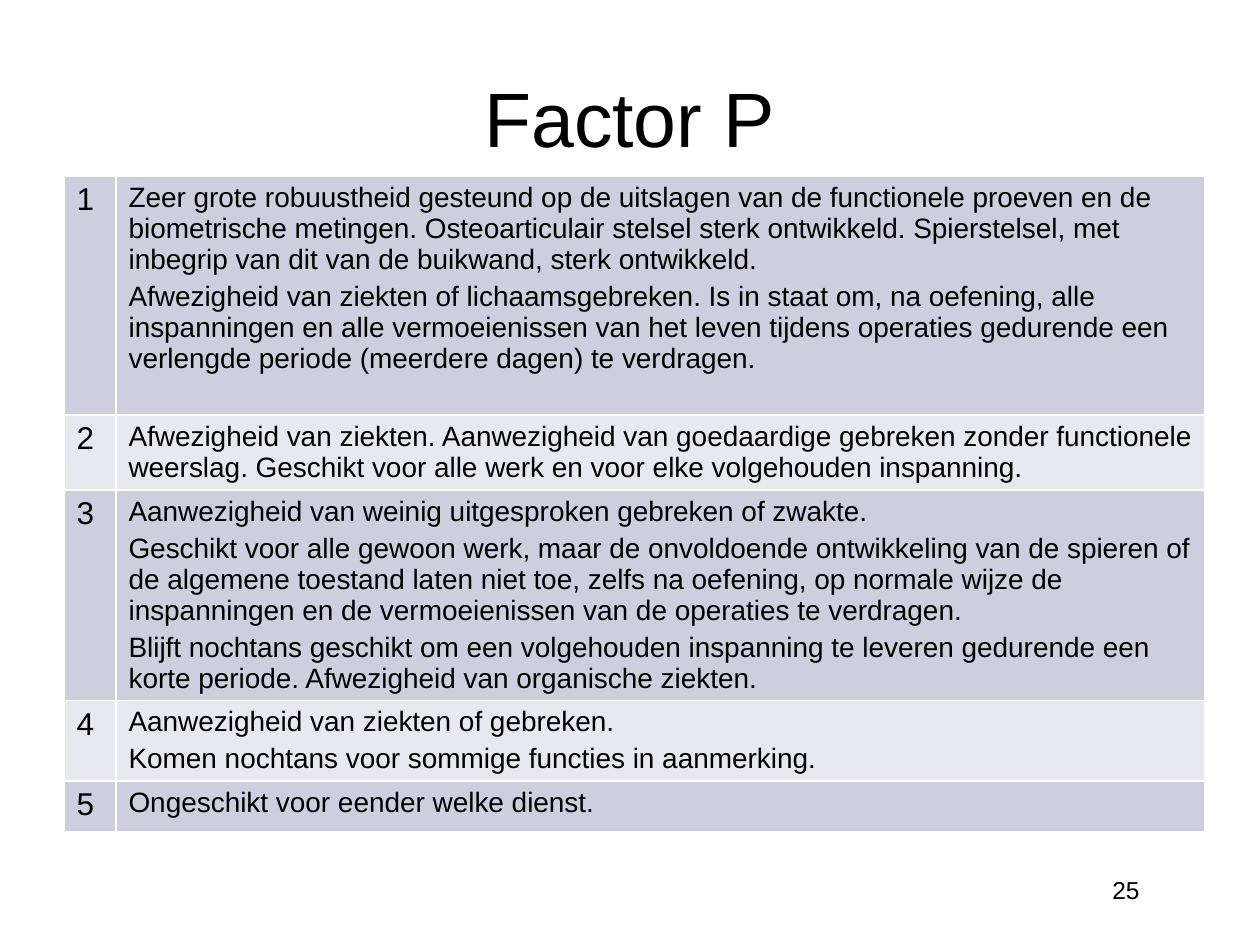
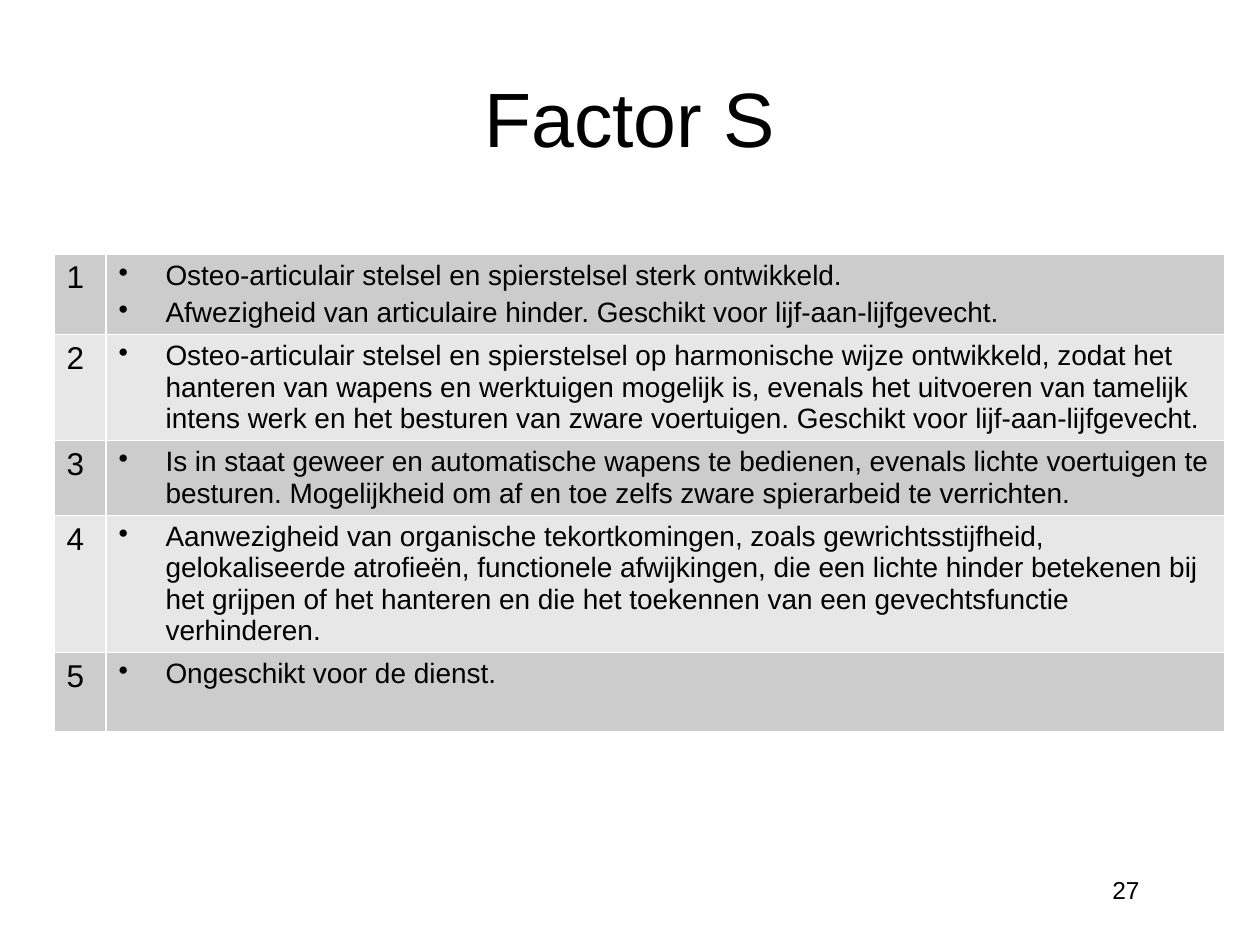
from lxml import etree
from pptx import Presentation
from pptx.dml.color import RGBColor
from pptx.enum.text import MSO_ANCHOR, PP_ALIGN
from pptx.oxml.ns import qn
from pptx.util import Emu, Pt

EMU_PER_PX = 914400 / 126
FONT = "Arial"
BLACK = RGBColor(0x00, 0x00, 0x00)
WHITE = RGBColor(0xFF, 0xFF, 0xFF)
LILAC = RGBColor(0xCE, 0xCE, 0xDE)
PALE_LILAC = RGBColor(0xE8, 0xE8, 0xEF)
GREY = RGBColor(0xCC, 0xCC, 0xCC)
PALE_GREY = RGBColor(0xE7, 0xE7, 0xE7)
CENTER, RIGHT = PP_ALIGN.CENTER, PP_ALIGN.RIGHT
MIDDLE = MSO_ANCHOR.MIDDLE
TITLE_ONLY = 5
GRADE_WIDTH = 52
BULLET_INDENT = 47

# Each grade: row height in px, then its paragraphs
FACTOR_P = [
    (239, [
        "Zeer grote robuustheid gesteund op de uitslagen van de functionele proeven en de "
        "biometrische metingen. Osteoarticulair stelsel sterk ontwikkeld. Spierstelsel, met "
        "inbegrip van dit van de buikwand, sterk ontwikkeld.",
        "Afwezigheid van ziekten of lichaamsgebreken. Is in staat om, na oefening, alle "
        "inspanningen en alle vermoeienissen van het leven tijdens operaties gedurende een "
        "verlengde periode (meerdere dagen) te verdragen.",
    ]),
    (75, [
        "Afwezigheid van ziekten. Aanwezigheid van goedaardige gebreken zonder functionele "
        "weerslag. Geschikt voor alle werk en voor elke volgehouden inspanning.",
    ]),
    (210, [
        "Aanwezigheid van weinig uitgesproken gebreken of zwakte.",
        "Geschikt voor alle gewoon werk, maar de onvoldoende ontwikkeling van de spieren of "
        "de algemene toestand laten niet toe, zelfs na oefening, op normale wijze de "
        "inspanningen en de vermoeienissen van de operaties te verdragen.",
        "Blijft nochtans geschikt om een volgehouden inspanning te leveren gedurende een "
        "korte periode. Afwezigheid van organische ziekten.",
    ]),
    (80, [
        "Aanwezigheid van ziekten of gebreken.",
        "Komen nochtans voor sommige functies in aanmerking.",
    ]),
    (51, ["Ongeschikt voor eender welke dienst."]),
]
FACTOR_S = [
    (80, [
        "Osteo-articulair stelsel en spierstelsel sterk ontwikkeld.",
        "Afwezigheid van articulaire hinder. Geschikt voor lijf-aan-lijfgevecht.",
    ]),
    (106, [
        "Osteo-articulair stelsel en spierstelsel op harmonische wijze ontwikkeld, zodat het "
        "hanteren van wapens en werktuigen mogelijk is, evenals het uitvoeren van tamelijk "
        "intens werk en het besturen van zware voertuigen. Geschikt voor lijf-aan-lijfgevecht.",
    ]),
    (75, [
        "Is in staat geweer en automatische wapens te bedienen, evenals lichte voertuigen te "
        "besturen. Mogelijkheid om af en toe zelfs zware spierarbeid te verrichten.",
    ]),
    (137, [
        "Aanwezigheid van organische tekortkomingen, zoals gewrichtsstijfheid, "
        "gelokaliseerde atrofieën, functionele afwijkingen, die een lichte hinder betekenen bij "
        "het grijpen of het hanteren en die het toekennen van een gevechtsfunctie "
        "verhinderen.",
    ]),
    (79, ["Ongeschikt voor de dienst."]),
]


def px(length):
    return Emu(round(length * EMU_PER_PX))


def format_paragraph(paragraph, size, alignment=None):
    paragraph.alignment = alignment
    for run in paragraph.runs:
        run.font.name = FONT
        run.font.size = Pt(size)
        run.font.color.rgb = BLACK


def add_title(slide, text):
    title = slide.shapes.title
    title.left, title.top, title.width, title.height = px(63), px(38), px(1134), px(158)
    title.text_frame.text = text
    title.text_frame.vertical_anchor = MIDDLE
    format_paragraph(title.text_frame.paragraphs[0], 44, CENTER)


def add_page_number(slide, number):
    text_box = slide.shapes.add_textbox(px(858), px(869), px(294), px(66))
    text_box.text_frame.word_wrap = True
    text_box.text_frame.text = str(number)
    format_paragraph(text_box.text_frame.paragraphs[0], 14, RIGHT)


def add_bullet(paragraph):
    properties = paragraph._p.get_or_add_pPr()
    properties.set("marL", str(px(BULLET_INDENT)))
    properties.set("indent", str(-px(BULLET_INDENT)))
    etree.SubElement(properties, qn("a:buChar"), char="•")


def style_cell(cell, color):
    """Give the cell thin white borders and a plain fill."""
    properties = cell._tc.get_or_add_tcPr()
    for side in ("lnL", "lnR", "lnT", "lnB"):
        line = etree.SubElement(properties, qn(f"a:{side}"), w=str(Pt(1)))
        line_fill = etree.SubElement(line, qn("a:solidFill"))
        etree.SubElement(line_fill, qn("a:srgbClr"), val=str(WHITE))
    cell.fill.solid()
    cell.fill.fore_color.rgb = color


def write_description(cell, texts, bulleted):
    cell.text_frame.text = "\n".join(texts)
    for index, paragraph in enumerate(cell.text_frame.paragraphs):
        if bulleted:
            add_bullet(paragraph)
        if index:
            paragraph.space_before = Pt(3.2)
        format_paragraph(paragraph, 16)


def add_grade_table(slide, left, top, width, grades, band_colors, bulleted):
    total_height = sum(height for height, _ in grades)
    table = slide.shapes.add_table(
        len(grades), 2, px(left), px(top), px(width), px(total_height)).table
    table.first_row = False
    table.horz_banding = False
    table.columns[0].width = px(GRADE_WIDTH)
    table.columns[1].width = px(width - GRADE_WIDTH)
    for index, (height, texts) in enumerate(grades):
        table.rows[index].height = px(height)
        grade_cell, description_cell = table.rows[index].cells
        for cell in (grade_cell, description_cell):
            style_cell(cell, band_colors[index % 2])
        grade_cell.text_frame.text = str(index + 1)
        format_paragraph(grade_cell.text_frame.paragraphs[0], 18)
        write_description(description_cell, texts, bulleted)


def add_factor_slide(presentation, title, number, **table_options):
    slide = presentation.slides.add_slide(presentation.slide_layouts[TITLE_ONLY])
    add_title(slide, title)
    add_grade_table(slide, **table_options)
    add_page_number(slide, number)


def main():
    presentation = Presentation()
    presentation.slide_width, presentation.slide_height = px(1260), px(945)
    add_factor_slide(presentation, "Factor P", 25, left=64, top=176, width=1141,
                     grades=FACTOR_P, band_colors=(LILAC, PALE_LILAC), bulleted=False)
    add_factor_slide(presentation, "Factor S", 27, left=54, top=254, width=1171,
                     grades=FACTOR_S, band_colors=(GREY, PALE_GREY), bulleted=True)
    presentation.save("out.pptx")


if __name__ == "__main__":
    main()
